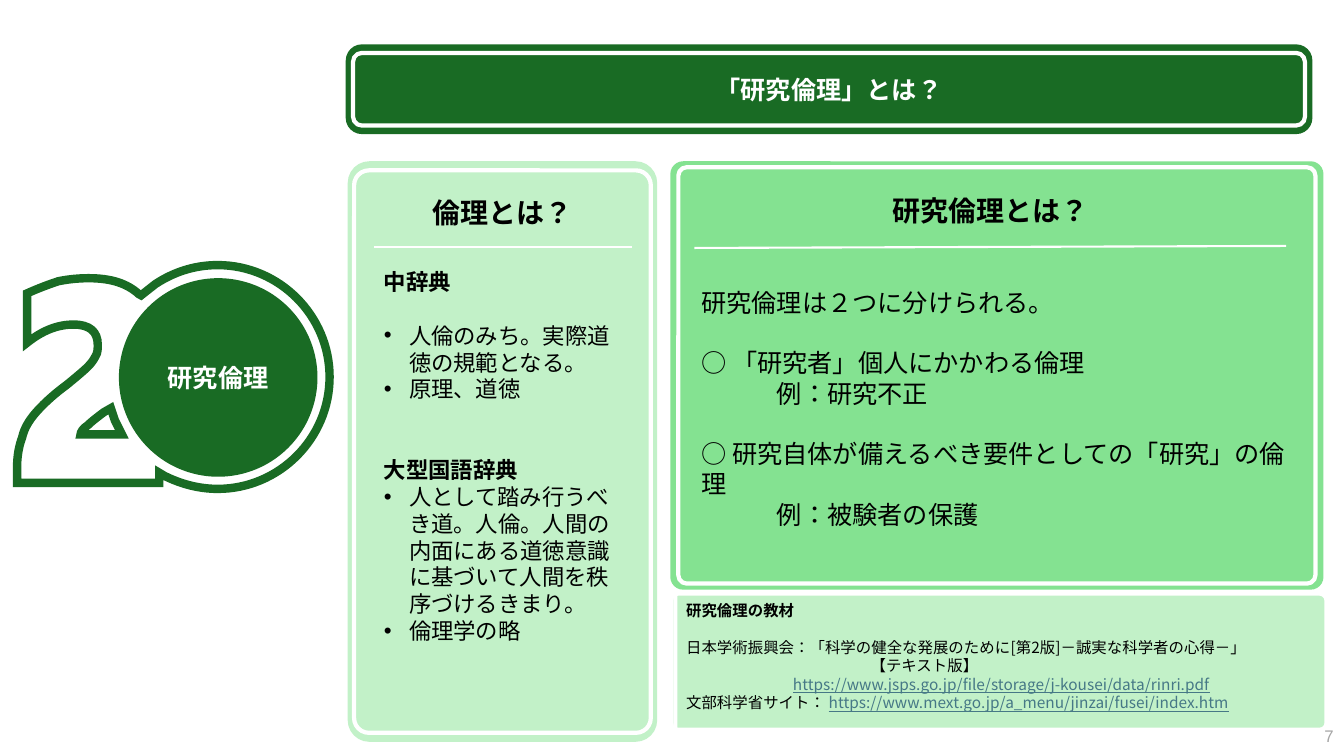
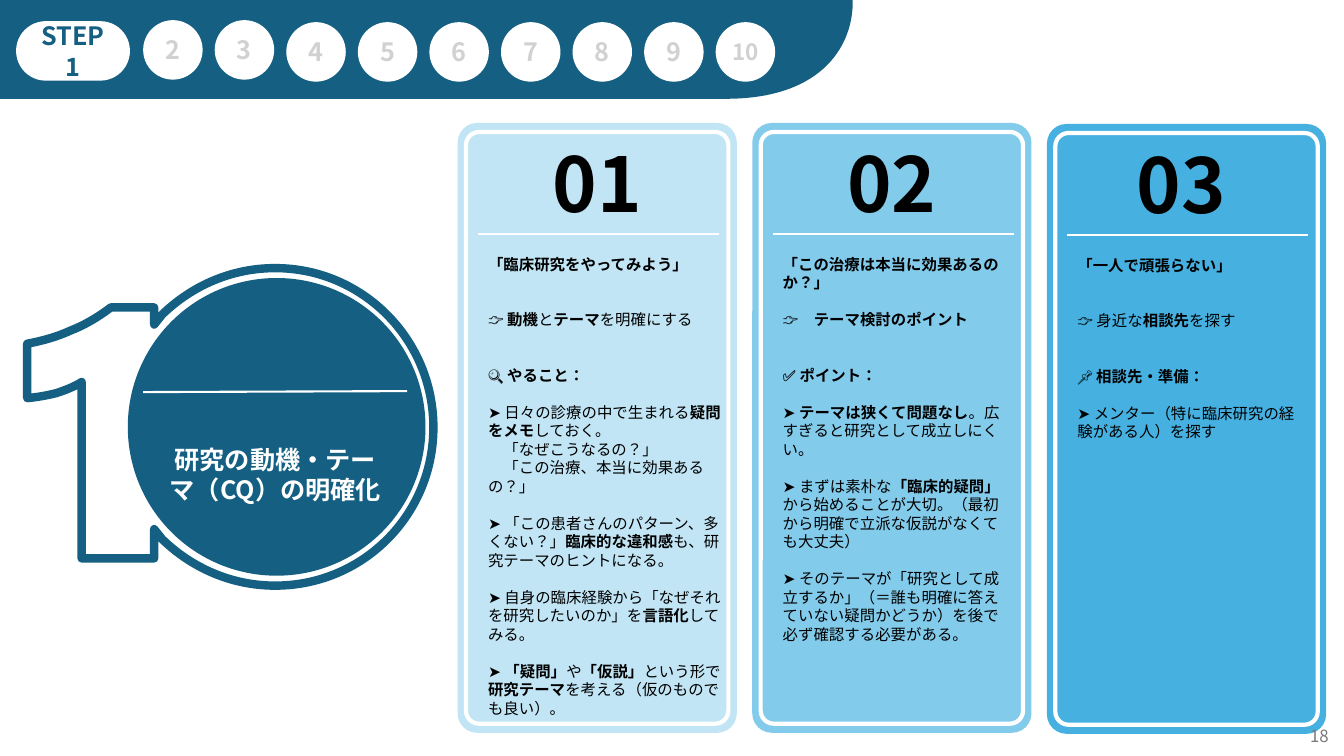
"""Build two research-guide slides: research ethics and the first research step."""
from lxml import etree
from pptx import Presentation
from pptx import util as u
from pptx.dml.color import RGBColor
from pptx.enum import lang, shapes, text
from pptx.oxml import ns

WIDTH, HEIGHT = u.Inches(40 / 3), u.Inches(7.5)
COL, ROW = WIDTH / 40, HEIGHT / 30
POINT = u.Inches(0.01)
FONT, FOLIO_FONT = "Noto Sans CJK JP", "Arial"
LEADING = 1.2

WHITE, BLACK = RGBColor(255, 255, 255), RGBColor(0, 0, 0)
GREEN, LIME, MINT = (RGBColor.from_string(c) for c in ("196B24", "84E291", "C2F1C8"))
NAVY, PALE, SKY, AZURE = (
    RGBColor.from_string(c) for c in ("156082", "C1E5F5", "83CBEB", "46B1E1"))
LINK, MUTED = RGBColor.from_string("467886"), RGBColor.from_string("D1D1D1")
FOLIO_GREY, FOLIO_DARK = RGBColor.from_string("A6A6A6"), RGBColor.from_string("797979")

ROUND = shapes.MSO_SHAPE.ROUNDED_RECTANGLE
DISC = shapes.MSO_SHAPE.FLOWCHART_CONNECTOR
CENTER, RIGHT = text.PP_ALIGN.CENTER, text.PP_ALIGN.RIGHT
MIDDLE = text.MSO_ANCHOR.MIDDLE
BULLET = "bullet"

ETHICS = [
    (0, 0, "**中辞典**"),
    (1, BULLET, "人倫のみち。実際道徳の規範となる。"),
    (0, BULLET, "原理、道徳"),
    (2, 0, "**大型国語辞典**"),
    (0, BULLET, "人として踏み行うべき道。人倫。人間の内面にある道徳意識に基づいて"
                "人間を秩序づけるきまり。"),
    (0, BULLET, "倫理学の略"),
]
RESEARCH_ETHICS = [
    (0, 0, "研究倫理は２つに分けられる。"),
    (1, 0, "○ 「研究者」個人にかかわる倫理"),
    (0, 0.75, "例：研究不正"),
    (1, 0, "○ 研究自体が備えるべき要件としての「研究」の倫理"),
    (0, 0.75, "例：被験者の保護"),
]
MATERIALS = [
    (0, 0, "**研究倫理の教材**"),
    (1, 0, "日本学術振興会：「科学の健全な発展のために[第2版]－誠実な科学者の心得－」"),
    (0, 1.83, "【テキスト版】"),
    (0, 1.06, "https://www.jsps.go.jp/file/storage/j-kousei/data/rinri.pdf"),
    (0, 0, "文部科学省サイト： https://www.mext.go.jp/a_menu/jinzai/fusei/index.htm"),
]
CARDS = [
    ("01", PALE, (0, 0), 7.53, [
        (0, 0, "**「臨床研究をやってみよう」**"),
        (2, 0, "👉 **動機**と**テーマ**を明確にする"),
        (2, 0, "**🔍 やること：**"),
        (1, 0, "➤ 日々の診療の中で生まれる**疑問をメモ**しておく。\n"
               "　「なぜこうなるの？」\n　「この治療、本当に効果あるの？」"),
        (1, 0, "➤ 「この患者さんのパターン、多くない？」**臨床的な違和感**も、"
               "研究テーマのヒントになる。"),
        (1, 0, "➤ 自身の臨床経験から「なぜそれを研究したいのか」を**言語化**してみる。"),
        (1, 0, "➤ **「疑問」**や**「仮説」**という形で**研究テーマ**を考える"
               "（仮のものでも良い）。"),
    ]),
    ("02", SKY, (0, 0), 7.17, [
        (0, 0, "**「この治療は本当に効果あるのか？」**"),
        (1, 0, "👉　**テーマ検討のポイント**"),
        (2, 0, "**✅ ポイント：**"),
        (1, 0, "➤ **テーマは狭くて問題なし**。広すぎると研究として成立しにくい。"),
        (1, 0, "➤ まずは素朴な**「臨床的疑問」**から始めることが大切。"
               "（最初から明確で立派な仮説がなくても大丈夫）"),
        (1, 0, "➤ そのテーマが「研究として成立するか」（＝誰も明確に答えていない"
               "疑問かどうか）を後で必ず確認する必要がある。"),
    ]),
    ("03", AZURE, (-0.15, 0.04), 7.17, [
        (0, 0, "**「一人で頑張らない」**"),
        (2, 0, "👉 身近な**相談先**を探す"),
        (2, 0, "**📌 相談先・準備：**"),
        (1, 0, "➤ メンター（特に臨床研究の経験がある人）を探す"),
    ]),
]
STEPS = range(2, 11)

TWO = [
    [(216, 263), (277, 263, 327, 313, 327, 374), (327, 435, 277, 485, 216, 485),
     (197, 485, 179, 480, 163, 472), (158, 469), (158, 479), (17, 479), (17, 463),
     (17, 452, 19, 442, 22, 434), (24, 425, 29, 417, 35, 410),
     (41, 403, 51, 393, 66, 382), (77, 373, 84, 367, 87, 364),
     (91, 360, 93, 357, 95, 353), (97, 350, 97, 346, 97, 342),
     (97, 329, 89, 322, 73, 322), (57, 322, 42, 328, 27, 340), (27, 291),
     (38, 286, 49, 282, 58, 279), (68, 277, 78, 276, 88, 276),
     (110, 276, 126, 281, 138, 292), (140, 293), (154, 282),
     (172, 270, 193, 263, 216, 263)],
    [(110, 405), (103, 409), (95, 415, 90, 419, 87, 422),
     (82, 425, 80, 429, 80, 431), (121, 431), (114, 417)],
]
ONE = [
    [(273, 266), (360, 266, 430, 337, 430, 424), (430, 511, 360, 581, 273, 581),
     (229, 581, 190, 563, 161, 535), (153, 525), (153, 554), (81, 554), (81, 379),
     (73, 384, 65, 387, 56, 390), (48, 392, 38, 394, 27, 395), (27, 341),
     (43, 338, 57, 334, 70, 328), (83, 323, 97, 315, 110, 305), (153, 305),
     (153, 322), (161, 312), (190, 284, 229, 266, 273, 266)],
]
STEP_BAND = [[(0, 0), (723, 0), (846, 0), (847, 43, 818, 97, 723, 98), (0, 98)]]


def place(x, y, w, h):
    return [round(v) for v in (x * COL, y * ROW, w * COL, h * ROW)]


def paint(shape, fill, line=None, weight=3):
    shape.shadow.inherit = False
    if fill is None:
        shape.fill.background()
    else:
        shape.fill.solid()
        shape.fill.fore_color.rgb = fill
    if line is None:
        shape.line.fill.background()
    else:
        shape.line.color.rgb = line
        shape.line.width = u.Pt(weight)
    return shape


def block(slide, kind, box, fill, line=None, weight=3, corner=None):
    shape = slide.shapes.add_shape(kind, *place(*box))
    if corner is not None:
        shape.adjustments[0] = corner
    return paint(shape, fill, line, weight)


def panel(slide, box, fill, inset, corners):
    x, y, w, h = box
    dx, dy = inset
    block(slide, ROUND, box, fill, corner=corners[0])
    inner = (x + dx, y + dy, w - 2 * dx, h - 2 * dy)
    return block(slide, ROUND, inner, fill, WHITE, corner=corners[1])


def add_run(paragraph, words, size, color, bold, font):
    run = paragraph.add_run()
    run.text = words
    run.font.size, run.font.bold, run.font.name = u.Pt(size), bold, font
    run.font.language_id = lang.MSO_LANGUAGE_ID.JAPANESE
    run.font.color.rgb = color
    etree.SubElement(run.font._rPr, ns.qn("a:ea"), typeface=font)
    return run


def write(shape, paragraphs, size, color=BLACK, align=None, anchor=None, font=FONT):
    frame = shape.text_frame
    frame.word_wrap = True
    if anchor is not None:
        frame.vertical_anchor = anchor
    for i, (blanks, indent, words) in enumerate(paragraphs):
        paragraph = frame.add_paragraph() if i else frame.paragraphs[0]
        paragraph.alignment = align or text.PP_ALIGN.LEFT
        paragraph.line_spacing = u.Pt(size * LEADING)
        paragraph.space_before = u.Pt(blanks * size * LEADING)
        props = paragraph._p.get_or_add_pPr()
        if indent == BULLET:
            props.set("marL", str(u.Inches(0.25)))
            props.set("indent", str(-u.Inches(0.25)))
            etree.SubElement(props, ns.qn("a:buFont"), typeface="Arial")
            etree.SubElement(props, ns.qn("a:buChar"), char="•")
        elif indent:
            props.set("indent", str(u.Inches(indent)))
        for j, part in enumerate(words.split("**")):
            lead, scheme, rest = part.partition("https")
            for k, line in enumerate(lead.split("\n")):
                if k:
                    paragraph.add_line_break()
                if line:
                    add_run(paragraph, line, size, color, j % 2 == 1, font)
            if scheme:
                link = add_run(paragraph, scheme + rest, size, LINK, False, font)
                link.font.underline = True


def label(shape, words, size, color=BLACK):
    write(shape, [(0, 0, f"**{words}**")], size, color, CENTER, MIDDLE)


def textbox(slide, box):
    return slide.shapes.add_textbox(*place(*box))


def rule(slide, x1, y1, x2, y2):
    ends = [round(v) for v in (x1 * COL, y1 * ROW, x2 * COL, y2 * ROW)]
    line = slide.shapes.add_connector(shapes.MSO_CONNECTOR.STRAIGHT, *ends)
    line.line.color.rgb = WHITE
    line.line.width = u.Pt(1.5)
    etree.SubElement(line._element.spPr, ns.qn("a:effectLst"))


def outline(slide, contours, fill, line=None, mitred=False):
    ends = [[(s[-2] * POINT, s[-1] * POINT) for s in contour] for contour in contours]
    builder = slide.shapes.build_freeform(*ends[0][0])
    for i, points in enumerate(ends):
        if i:
            builder.move_to(*points[0])
        builder.add_line_segments(points[1:], close=True)
    shape = paint(builder.convert_to_shape(), fill, line, 6)
    segments = [s for contour in contours for s in contour[1:]]
    strokes = list(shape._element.iter(ns.qn("a:lnTo")))
    for stroke, segment in zip(strokes, segments):
        if len(segment) == 6:
            curve = etree.Element(ns.qn("a:cubicBezTo"))
            for x, y in zip(segment[::2], segment[1::2]):
                etree.SubElement(curve, ns.qn("a:pt"), x=str(x * POINT - shape.left),
                                 y=str(y * POINT - shape.top))
            stroke.getparent().replace(stroke, curve)
    if mitred:
        edge = shape._element.spPr.find(ns.qn("a:ln"))
        etree.SubElement(edge, ns.qn("a:miter"), lim="800000")


def folio(slide, number, box, color, font):
    write(textbox(slide, box), [(0, 0, number)], 12, color, RIGHT, MIDDLE, font)


def ethics_slide(slide):
    block(slide, ROUND, (20.04, 23.64, 19.38, 5.24), MINT, corner=0.04)
    materials = block(slide, ROUND, (20.1, 23.04, 19.44, 6), None, WHITE, corner=0.02)
    write(materials, MATERIALS, 11, anchor=MIDDLE)

    outline(slide, TWO, WHITE, GREEN, mitred=True)
    label(block(slide, DISC, (3.54, 11.04, 5.91, 7.88), GREEN), "研究倫理", 18, WHITE)

    panel(slide, (10.35, 6.4, 9.21, 23.04), MINT, (0.19, 0.36), (0.07, 0.05))
    label(textbox(slide, (11.79, 7.56, 6.36, 1.76)), "倫理とは？", 20)
    write(textbox(slide, (11.13, 10.44, 7.68, 18.72)), ETHICS, 16)
    rule(slide, 11.13, 9.8, 18.81, 9.8)

    title = panel(slide, (10.29, 1.76, 28.77, 3.56), GREEN, (0.22, 0.34), (0.18, 0.12))
    label(title, "「研究倫理」とは？", 18, WHITE)

    panel(slide, (19.95, 6.4, 19.44, 17), LIME, (0.24, 0.24), (0.03, 0.02))
    label(textbox(slide, (26.22, 7.48, 6.51, 1.76)), "研究倫理とは？", 20)
    write(textbox(slide, (20.58, 11.2, 18.69, 10.08)), RESEARCH_ETHICS, 18)
    rule(slide, 20.67, 9.84, 38.28, 9.76)
    folio(slide, "7", (30.99, 28.44, 9, 1.52), FOLIO_GREY, FOLIO_FONT)


def step_slide(slide):
    for i, (number, fill, (shift, drop), measure, points) in enumerate(CARDS):
        left, top = 13.62 + 8.77 * i, 4.88 + drop
        panel(slide, (left, top, 8.31, 24.2), fill, (0.25, 0.36), (0.07, 0.05))
        label(textbox(slide, (left + shift, top + 0.34, 8.31, 4.04)), number, 54)
        write(textbox(slide, (left + 0.61, top + 5.04, measure, 18)), points, 11)
        rule(slide, left + 0.61, top + 4.4, left + 7.78, top + 4.4)

    outline(slide, ONE, WHITE, NAVY)
    block(slide, DISC, (3.93, 11.2, 8.61, 11.48), NAVY, NAVY, 6)
    theme = textbox(slide, (4.73, 17.44, 6.93, 4.2))
    write(theme, [(0, 0, "**研究の動機・テーマ（CQ）の明確化**")], 18, WHITE, CENTER)
    rule(slide, 4.26, 15.56, 12.12, 15.52)

    outline(slide, STEP_BAND, NAVY)
    current = block(slide, ROUND, (0.48, 0.84, 3.39, 2.36), WHITE, corner=0.5)
    label(current, "STEP 1", 18, NAVY)
    for i, step in enumerate(STEPS):
        top = 0.8 if step < 4 else 0.88
        badge = block(slide, DISC, (4.26 + 2.13 * i, top, 1.77, 2.36), WHITE)
        frame = badge.text_frame
        frame.margin_left = frame.margin_right = u.Inches(0.04)
        label(badge, str(step), 18 if step < 10 else 16, MUTED)
    folio(slide, "18", (30.84, 28.4, 9, 1.6), FOLIO_DARK, FONT)


def main():
    deck = Presentation()
    deck.slide_width, deck.slide_height = WIDTH, HEIGHT
    for build in (ethics_slide, step_slide):
        build(deck.slides.add_slide(deck.slide_layouts[6]))
    deck.save("out.pptx")


if __name__ == "__main__":
    main()
